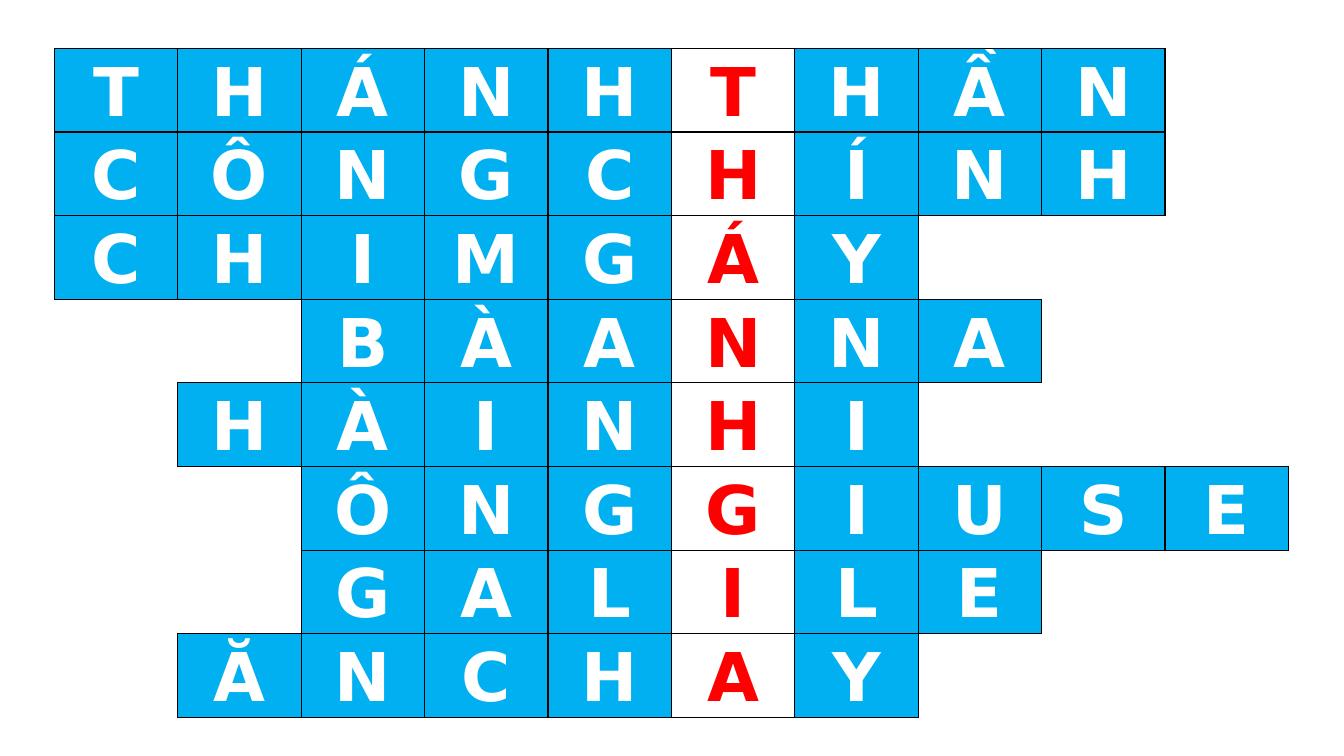
from lxml import etree
from pptx import Presentation
from pptx.dml.color import RGBColor
from pptx.enum.text import MSO_ANCHOR, PP_ALIGN
from pptx.oxml.ns import qn
from pptx.util import Cm, Pt

CENTER = PP_ALIGN.CENTER
MIDDLE = MSO_ANCHOR.MIDDLE
BLANK_LAYOUT = 6

COLORS = {
    "tile": "00B0F0",
    "key_tile": "FFFFFF",
    "letter": "FFFFFF",
    "key_letter": "FF0000",
    "border": "000000",
}
FONT = "DejaVu Sans"

# Starting column and letters of each answer
ANSWERS = [
    (0, "THÁNHTHẦN"),
    (0, "CÔNGCHÍNH"),
    (0, "CHIMGÁY"),
    (2, "BÀANNA"),
    (1, "HÀINHI"),
    (2, "ÔNGGIUSE"),
    (2, "GALILE"),
    (1, "ĂNCHAY"),
]
COLUMN_COUNT = 10
KEY_COLUMN = 5
COLUMN_WIDTH = Cm(3.11)
ROW_HEIGHT = Cm(2.09)

# Border element and the step (row, column) to the cell on that side
SIDES = {"a:lnL": (0, -1), "a:lnR": (0, 1), "a:lnT": (-1, 0), "a:lnB": (1, 0)}


def rgb(name):
    return RGBColor.from_string(COLORS[name])


def letter_positions():
    return {
        (row, start + offset): letter
        for row, (start, word) in enumerate(ANSWERS)
        for offset, letter in enumerate(word)
    }


def set_borders(cell, visible_sides):
    """Draw the given sides and hide the others; call before setting the fill."""
    properties = cell._tc.get_or_add_tcPr()
    for side in SIDES:
        line = etree.SubElement(properties, qn(side), w=str(Pt(1)))
        if side in visible_sides:
            fill = etree.SubElement(line, qn("a:solidFill"))
            etree.SubElement(fill, qn("a:srgbClr"), val=COLORS["border"])
        else:
            etree.SubElement(line, qn("a:noFill"))


def write_letter(cell, letter, is_key):
    cell.fill.solid()
    cell.fill.fore_color.rgb = rgb("key_tile" if is_key else "tile")
    cell.vertical_anchor = MIDDLE
    cell.margin_left = cell.margin_right = Cm(0.19)
    cell.margin_top = cell.margin_bottom = 0
    paragraph = cell.text_frame.paragraphs[0]
    paragraph.text = letter
    paragraph.alignment = CENTER
    paragraph.line_spacing = 1.07
    paragraph.space_after = Pt(8)
    font = paragraph.runs[0].font
    font.name = FONT
    font.size = Pt(48)
    font.bold = True
    font.color.rgb = rgb("key_letter" if is_key else "letter")


def add_crossword(slide):
    letters = letter_positions()
    table = slide.shapes.add_table(
        len(ANSWERS), COLUMN_COUNT, Cm(1.37), Cm(1.22),
        COLUMN_WIDTH * COLUMN_COUNT, ROW_HEIGHT * len(ANSWERS),
    ).table
    table.first_row = False
    table.horz_banding = False
    for column in table.columns:
        column.width = COLUMN_WIDTH
    for row_index, row in enumerate(table.rows):
        row.height = ROW_HEIGHT
        for column_index, cell in enumerate(row.cells):
            position = (row_index, column_index)
            visible_sides = [
                side for side, (down, right) in SIDES.items()
                if position in letters
                or (row_index + down, column_index + right) in letters
            ]
            set_borders(cell, visible_sides)
            if position in letters:
                write_letter(cell, letters[position], column_index == KEY_COLUMN)
            else:
                cell.fill.background()


def main():
    presentation = Presentation()
    presentation.slide_width = Cm(33.87)
    presentation.slide_height = Cm(19.05)
    slide = presentation.slides.add_slide(presentation.slide_layouts[BLANK_LAYOUT])
    add_crossword(slide)
    presentation.save("out.pptx")


if __name__ == "__main__":
    main()
